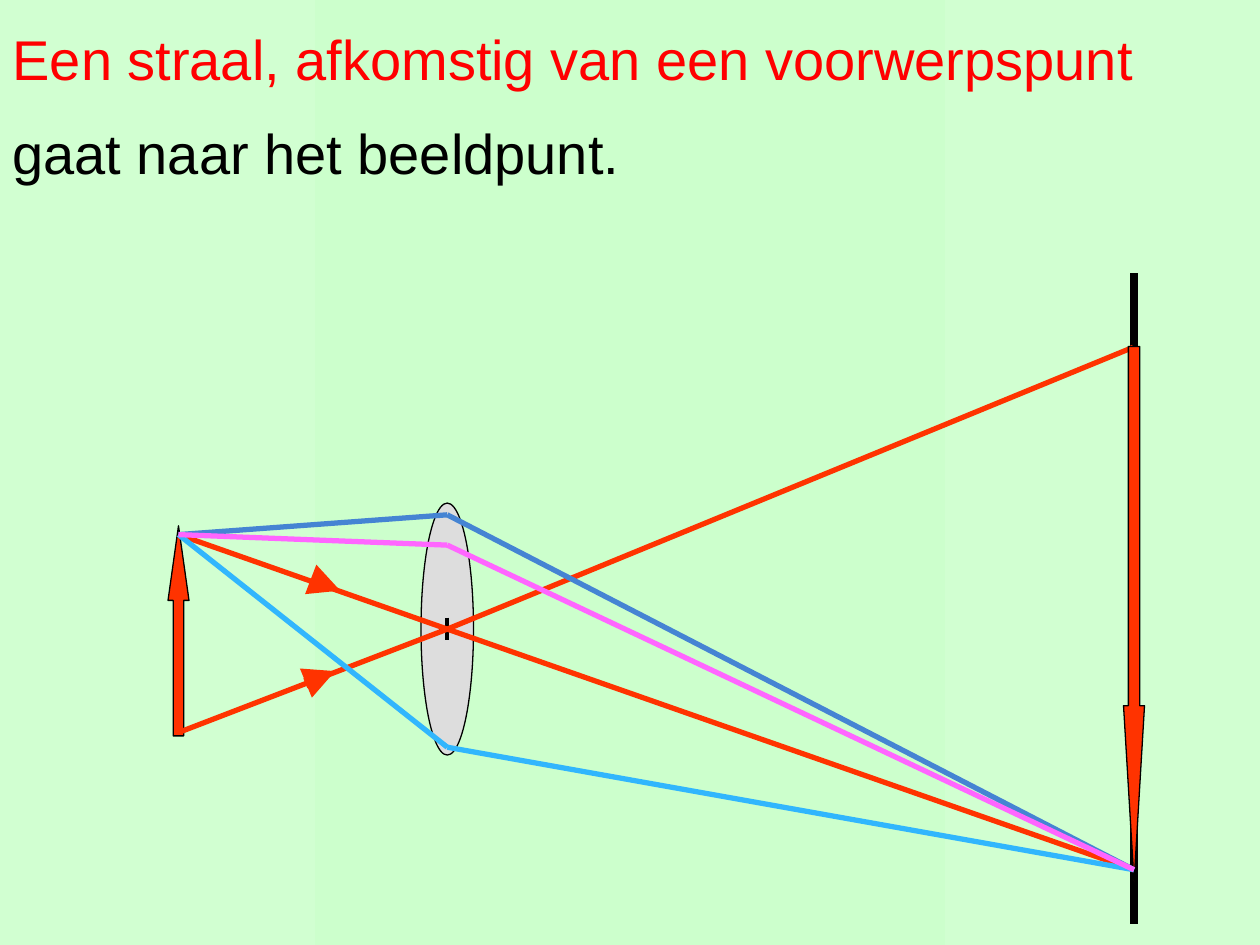
from copy import deepcopy

from lxml.etree import SubElement
from pptx import Presentation
from pptx.dml.color import RGBColor
from pptx.enum.shapes import MSO_CONNECTOR as CONNECTOR, MSO_SHAPE as SHAPE
from pptx.enum.text import MSO_ANCHOR as ANCHOR, MSO_AUTO_SIZE as AUTO_SIZE, PP_ALIGN as ALIGN
from pptx.oxml.ns import qn
from pptx.util import Pt

COLORS = {
    "edge": "D1FFD1", "middle": "CCFFCC", "title": "FF0000", "black": "000000",
    "lens": "DDDDDD", "red": "FF3300", "blue": "4584D3", "sky": "31B6FD", "pink": "FF66FF",
}


def rgb(color):
    return RGBColor.from_string(COLORS[color])


def paint_background(slide):
    fill = slide.background.fill
    fill.gradient()
    fill.gradient_angle = 0
    first, last = fill.gradient_stops
    for stop, position in ((first, 0), (last, 1)):
        stop.position = position
        stop.color.rgb = rgb("edge")
    stops = slide.background._cSld.find(".//" + qn("a:gsLst"))
    stops.insert(1, deepcopy(stops[0]))
    center = fill.gradient_stops[1]
    center.position = 0.5
    center.color.rgb = rgb("middle")


def write(holder, text, color="black", size=32, font="Arial", hanging=66):
    frame = holder.text_frame
    frame.word_wrap = True
    frame.auto_size = AUTO_SIZE.NONE
    frame.vertical_anchor = ANCHOR.MIDDLE
    line = frame.paragraphs[0]
    line.alignment = ALIGN.LEFT
    indents = line._p.get_or_add_pPr()
    indents.set("marL", str(Pt(hanging)))
    indents.set("indent", str(-Pt(hanging)))
    run = line.add_run()
    run.text = text
    run.font.name = font
    run.font.size = Pt(size)
    run.font.bold = False
    run.font.color.rgb = rgb(color)


def add_statement(slide, left, top, width, height):
    title = slide.shapes.title
    title.left, title.top = Pt(left), Pt(top)
    title.width, title.height = Pt(width), Pt(0.57 * height)
    write(title, "Een straal, afkomstig van een voorwerpspunt", color="title")
    ending = slide.shapes.add_textbox(
        Pt(left), Pt(top + 0.6 * height), Pt(width - 42), Pt(0.4 * height))
    write(ending, "gaat naar het beeldpunt.")


def add_solid(slide, kind, center, width, height, color):
    x, y = center
    solid = slide.shapes.add_shape(
        kind, Pt(x - width / 2), Pt(y - height / 2), Pt(width), Pt(height))
    solid.shadow.inherit = False
    solid.fill.solid()
    solid.fill.fore_color.rgb = rgb(color)
    solid.line.color.rgb = rgb("black")
    solid.line.width = Pt(0.75)
    return solid


def add_object_arrow(slide, center, length, rotation, shaft, head):
    arrow = add_solid(slide, SHAPE.RIGHT_ARROW, center, length, 12, "red")
    arrow.rotation = rotation
    arrow.adjustments[0] = shaft
    arrow.adjustments[1] = head


def add_line(slide, start, end, color, width=3, arrow=False):
    line = slide.shapes.add_connector(
        CONNECTOR.STRAIGHT, Pt(start[0]), Pt(start[1]), Pt(end[0]), Pt(end[1]))
    line.line.color.rgb = rgb(color)
    line.line.width = Pt(width)
    if arrow:
        SubElement(line.line._get_or_add_ln(), qn("a:tailEnd"), type="triangle")
    SubElement(line._element.spPr, qn("a:effectLst"))


def add_lens(slide, center):
    x, y = center
    add_solid(slide, SHAPE.OVAL, center, 30, 144, "lens")
    add_line(slide, (x - 4.5, y), (x + 4.5, y), "black", 2.25)
    add_line(slide, (x, y - 6.5), (x, y + 6.5), "black", 2.25)


def add_ray_diagram(slide, left, top, width, height):
    def at(x, y):
        return left + x, top + y

    screen_x = width - 12
    lens_x = 165.6
    lens_center = at(lens_x, 209.5)
    object_tip, object_foot = at(12, 155.5), at(13.5, 268)
    image_tip, image_foot = at(screen_x, 347), at(screen_x - 0.5, 48.5)

    add_lens(slide, lens_center)
    add_line(slide, at(screen_x, height - 6), at(screen_x, 6), "black", 4.5)
    for target in (image_tip, image_foot):
        add_line(slide, lens_center, target, "red")
    add_object_arrow(slide, at(screen_x, 201), 306, 90, 0.54, 8.4)
    add_object_arrow(slide, at(12, 210.5), 120, 270, 0.5, 3.55)

    incoming = ((object_tip, at(93.6, 183.4), at(104.4, 187.5)),
                (object_foot, at(84.5, 240.5), at(101.5, 233.5)))
    for source, head_start, head_tip in incoming:
        add_line(slide, source, lens_center, "red")
        add_line(slide, head_start, head_tip, "red", 6, arrow=True)

    for color, lens_y in (("blue", 144.2), ("sky", 277), ("pink", 161.5)):
        bend = at(lens_x, lens_y)
        add_line(slide, object_tip, bend, color)
        add_line(slide, bend, image_tip, color)


def main():
    deck = Presentation()
    deck.slide_width, deck.slide_height = Pt(720), Pt(540)
    slide = deck.slides.add_slide(deck.slide_layouts[0])
    subtitle = slide.placeholders[1]._element
    subtitle.getparent().remove(subtitle)
    paint_background(slide)
    add_statement(slide, 0, 3.5, 720, 104.5)
    add_ray_diagram(slide, 90, 150, 570, 384)
    deck.save("out.pptx")


if __name__ == "__main__":
    main()
